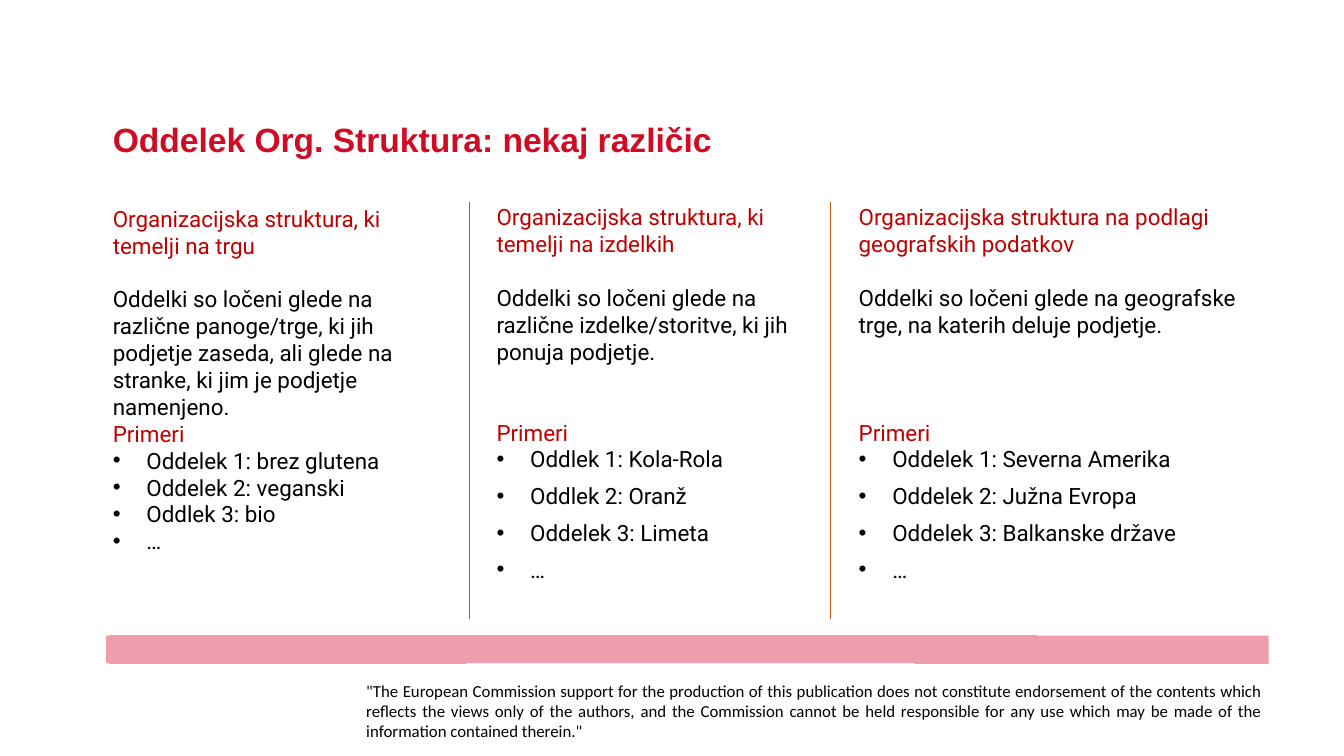
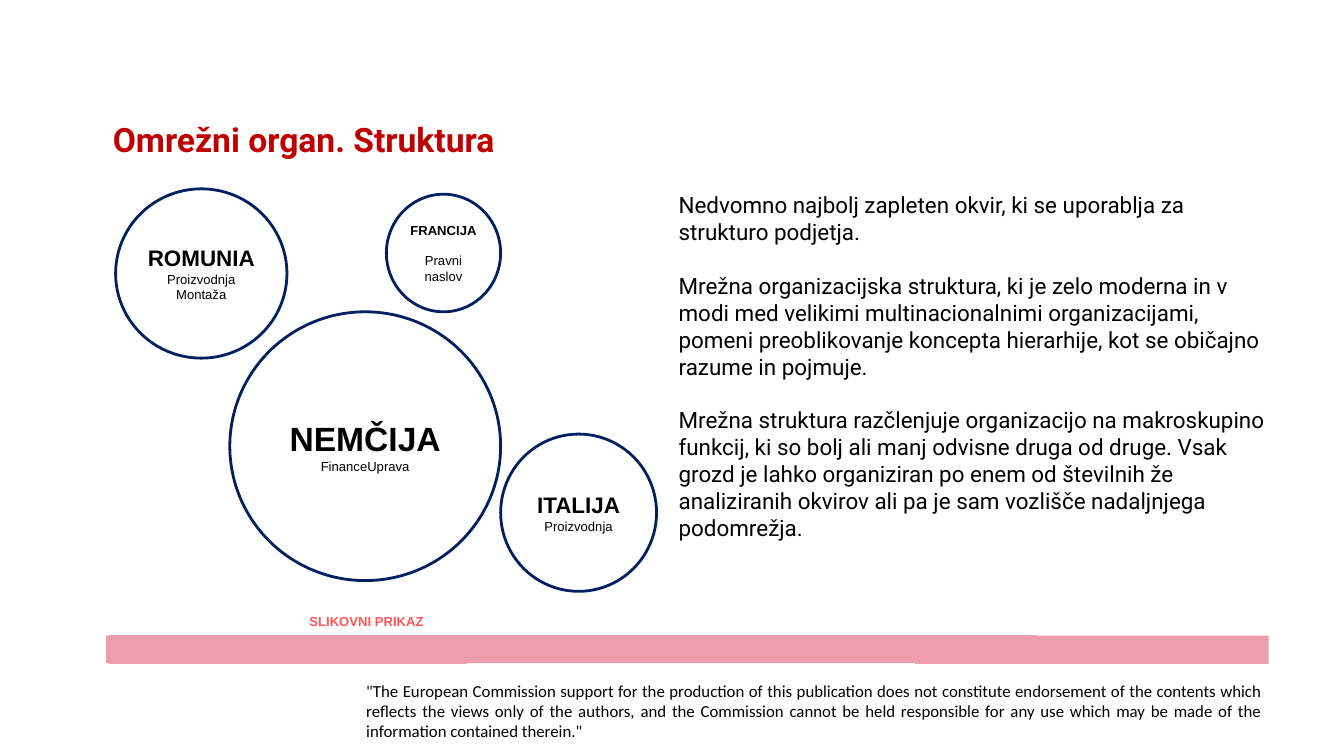
from lxml import etree
from pptx import Presentation
from pptx.dml.color import RGBColor
from pptx.enum.shapes import MSO_CONNECTOR as CONN, MSO_SHAPE as SHAPE
from pptx.enum.text import MSO_ANCHOR as ANCHOR, MSO_AUTO_SIZE as AUTO, PP_ALIGN as ALIGN
from pptx.oxml.ns import qn
from pptx.util import Inches, Pt

COLORS = {
    "band": "ED9DAB", "title": "D00B24", "heading": "C00000", "text": "000000",
    "divider": "C55A11", "ring": "002060", "paper": "FFFFFF", "caption": "FF5757",
}
LINE = 28.8  # height in points of one 24 pt line
BULLET_GAP = 10.6
DISCLAIMER = (
    '"The European Commission support for the production of this publication does not '
    "constitute endorsement of the contents which reflects the views only of the authors, "
    "and the Commission cannot be held responsible for any use which may be made of the "
    'information contained therein."'
)
# Upper and lower edges of the band, which step slightly along its length
BAND = [
    (18.88, 9.46), (15.43, 9.46), (15.43, 9.45), (1.62, 9.45), (1.62, 9.46),
    (1.58, 9.46), (1.58, 9.87), (1.62, 9.87), (1.62, 9.88), (6.94, 9.88),
    (6.94, 9.87), (13.62, 9.87), (13.62, 9.88), (18.88, 9.88),
]

# left, top, width, height, heading, description, gap before examples, gap between, examples
COLUMNS = [
    (1.58, 3, 5.22, 5.35, "Organizacijska struktura, ki temelji na trgu",
     "Oddelki so ločeni glede na različne panoge/trge, ki jih podjetje zaseda, "
     "ali glede na stranke, ki jim je podjetje namenjeno.", 0, 0,
     ["Oddelek 1: brez glutena", "Oddelek 2: veganski", "Oddlek 3: bio", "…"]),
    (7.29, 2.98, 5.09, 5.81, "Organizacijska struktura, ki temelji na izdelkih",
     "Oddelki so ločeni glede na različne izdelke/storitve, ki jih ponuja podjetje.",
     2 * LINE, BULLET_GAP,
     ["Oddlek 1: Kola-Rola", "Oddlek 2: Oranž", "Oddelek 3: Limeta", "…"]),
    (12.68, 2.98, 5.9, 5.81, "Organizacijska struktura na podlagi geografskih podatkov",
     "Oddelki so ločeni glede na geografske trge, na katerih deluje podjetje.",
     3 * LINE, BULLET_GAP,
     ["Oddelek 1: Severna Amerika", "Oddelek 2: Južna Evropa",
      "Oddelek 3: Balkanske države", "…"]),
]
DIVIDERS = [6.98, 12.36]

# left, top, width, height, country, its size, gap below it, role
COUNTRIES = [
    (3.42, 4.64, 4.03, 4, "NEMČIJA", 36, 0, "FinanceUprava"),
    (5.75, 2.89, 1.7, 1.75, "FRANCIJA", 14, 16, "Pravni naslov"),
    (7.45, 6.46, 2.32, 2.34, "ITALIJA", 24, 0, "Proizvodnja"),
    (1.72, 2.81, 2.55, 2.52, "ROMUNIA", 24, 0, "Proizvodnja Montaža"),
]
NETWORK_TEXT = [
    "Nedvomno najbolj zapleten okvir, ki se uporablja za strukturo podjetja.",
    "Mrežna organizacijska struktura, ki je zelo moderna in v modi med velikimi "
    "multinacionalnimi organizacijami, pomeni preoblikovanje koncepta hierarhije, "
    "kot se običajno razume in pojmuje.",
    "Mrežna struktura razčlenjuje organizacijo na makroskupino funkcij, ki so bolj ali "
    "manj odvisne druga od druge. Vsak grozd je lahko organiziran po enem od številnih že "
    "analiziranih okvirov ali pa je sam vozlišče nadaljnjega podomrežja.",
]


def rgb(name):
    return RGBColor.from_string(COLORS[name])


def set_bullet(p):
    pPr = p._p.get_or_add_pPr()
    pPr.set("marL", str(Inches(0.5)))
    pPr.set("indent", str(-Inches(0.5)))
    color = etree.SubElement(pPr, qn("a:buClr"))
    etree.SubElement(color, qn("a:srgbClr"), val=COLORS["text"])
    etree.SubElement(pPr, qn("a:buFont"), typeface="Arial")
    etree.SubElement(pPr, qn("a:buChar"), char="•")


def write(tf, text, size=24, font="Roboto", color="text", bold=False,
          align=None, before=0, spacing=None, bullet=False):
    """Add a paragraph, using the empty first one if there is no text yet."""
    p = tf.add_paragraph() if tf.text else tf.paragraphs[0]
    if bullet:
        set_bullet(p)
    if align is not None:
        p.alignment = align
    if before:
        p.space_before = Pt(before)
    if spacing:
        p.line_spacing = spacing
    r = p.add_run()
    r.text = text
    r.font.size, r.font.name, r.font.bold = Pt(size), font, bold
    r.font.color.rgb = rgb(color)


def add_box(s, left, top, width, height):
    tf = s.shapes.add_textbox(
        Inches(left), Inches(top), Inches(width), Inches(height)).text_frame
    tf.word_wrap = True
    tf.auto_size = AUTO.SHAPE_TO_FIT_TEXT
    return tf


def add_band(s):
    points = [(Inches(x), Inches(y)) for x, y in BAND]
    builder = s.shapes.build_freeform(*points[0])
    builder.add_line_segments(points[1:], close=True)
    sp = builder.convert_to_shape()
    sp.shadow.inherit = False
    sp.fill.solid()
    sp.fill.fore_color.rgb = rgb("band")
    sp.line.fill.background()


def add_footer(s):
    tf = add_box(s, 5.45, 10.15, 13.33, 0.76)
    tf.margin_left = tf.margin_right = tf.margin_top = tf.margin_bottom = 0
    write(tf, DISCLAIMER, size=18, font="Calibri", align=ALIGN.JUSTIFY, spacing=0.98)


def add_slide(prs, title, **title_format):
    s = prs.slides.add_slide(prs.slide_layouts[6])
    add_band(s)
    add_footer(s)
    write(add_box(s, 1.58, 1.72, 13.77, 0.71), title, size=36, bold=True, **title_format)
    return s


def add_column(s, left, top, width, height, heading, description, gap, bullet_gap, examples):
    tf = add_box(s, left, top, width, height)
    write(tf, heading, color="heading")
    write(tf, description, before=LINE)
    write(tf, "Primeri", color="heading", before=gap)
    for i, example in enumerate(examples):
        write(tf, example, bullet=True, before=bullet_gap if i else 0)


def add_divider(s, x):
    line = s.shapes.add_connector(
        CONN.STRAIGHT, Inches(x), Inches(3), Inches(x), Inches(9.21))
    line.line.color.rgb = rgb("divider")
    line.line.width = Pt(0.75)
    etree.SubElement(line._element.spPr, qn("a:effectLst"))


def add_country(s, left, top, width, height, country, size, gap, role):
    sp = s.shapes.add_shape(
        SHAPE.OVAL, Inches(left), Inches(top), Inches(width), Inches(height))
    sp.shadow.inherit = False
    sp.fill.solid()
    sp.fill.fore_color.rgb = rgb("paper")
    sp.line.color.rgb = rgb("ring")
    sp.line.width = Pt(3)
    tf = sp.text_frame
    tf.word_wrap = True
    tf.vertical_anchor = ANCHOR.MIDDLE
    write(tf, country, size=size, font="Arial", bold=True, align=ALIGN.CENTER)
    write(tf, role, size=14, font="Arial", align=ALIGN.CENTER, before=gap)


def add_division_slide(prs):
    s = add_slide(prs, "Oddelek Org. Struktura: nekaj različic",
                  font="Arial", color="title")
    for column in COLUMNS:
        add_column(s, *column)
    for x in DIVIDERS:
        add_divider(s, x)


def add_network_slide(prs):
    s = add_slide(prs, "Omrežni organ. Struktura", color="heading")
    tf = add_box(s, 10, 2.8, 8.92, 5.35)
    for i, text in enumerate(NETWORK_TEXT):
        write(tf, text, before=LINE if i else 0)
    for country in COUNTRIES:
        add_country(s, *country)
    write(add_box(s, 4.23, 9.08, 2.45, 0.34), "SLIKOVNI PRIKAZ", size=14, font="Arial",
          color="caption", bold=True, align=ALIGN.CENTER)


def main():
    prs = Presentation()
    prs.slide_width, prs.slide_height = Inches(20), Inches(11.25)
    add_division_slide(prs)
    add_network_slide(prs)
    prs.save("out.pptx")


if __name__ == "__main__":
    main()
